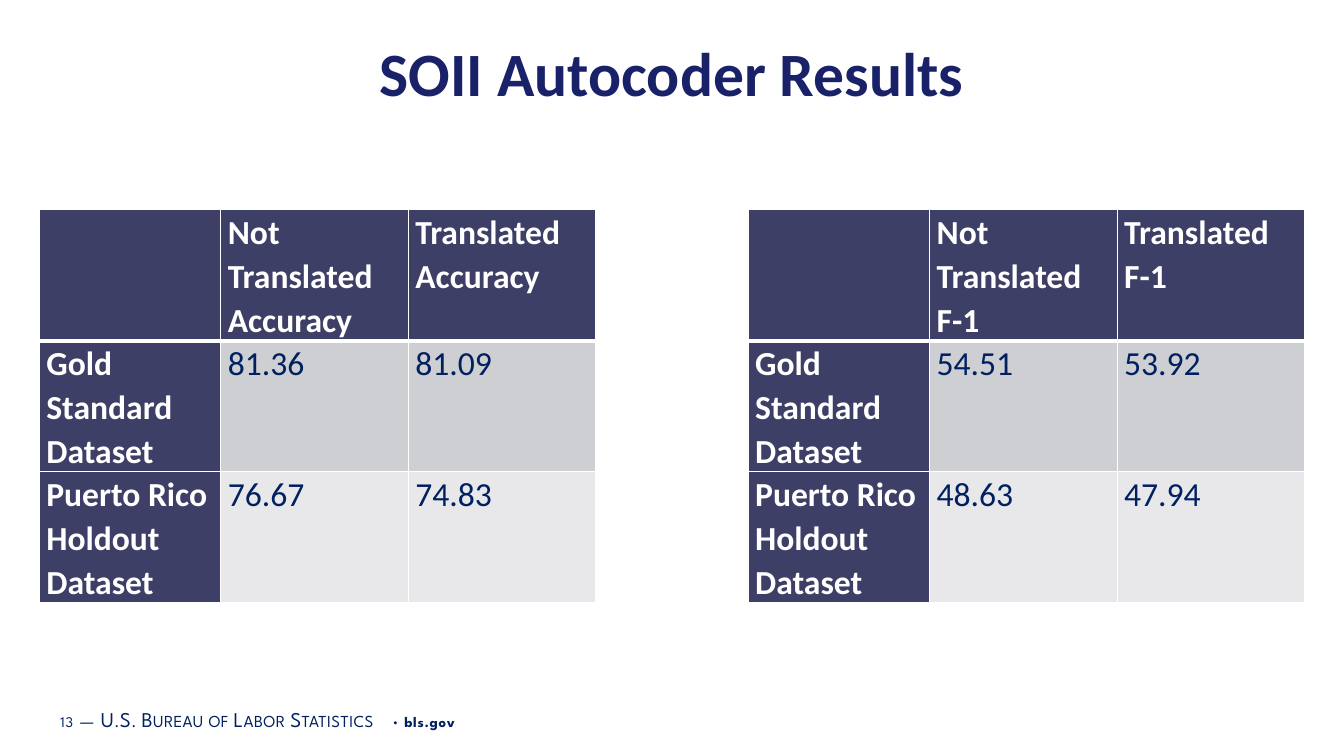
from dataclasses import dataclass

from lxml.etree import SubElement
from pptx import Presentation
from pptx.dml.color import RGBColor
from pptx.enum.text import MSO_ANCHOR as Anchor, PP_ALIGN as Align
from pptx.oxml.ns import qn
from pptx.util import Inches, Pt

TITLE = "SOII Autocoder Results"
ACCURACY = [
    ("", "Not Translated Accuracy", "Translated Accuracy"),
    ("Gold Standard Dataset", "81.36", "81.09"),
    ("Puerto Rico Holdout Dataset", "76.67", "74.83"),
]
F1 = [
    ("", "Not Translated F-1", "Translated F-1"),
    ("Gold Standard Dataset", "54.51", "53.92"),
    ("Puerto Rico Holdout Dataset", "48.63", "47.94"),
]


@dataclass(frozen=True)
class Theme:
    body_font: str = "Calibri"
    footer_font: str = "League Spartan"
    title: str = "192168"
    navy: str = "002060"
    header: str = "3E3F67"
    white: str = "FFFFFF"
    bands: tuple = ("CECFD3", "E8E8EB")
    title_size: float = 44
    table_size: float = 24
    footer_size: float = 10.5
    caps_size: float = 15
    gap_size: float = 16


THEME = Theme()
SMALL = dict(size=THEME.footer_size, spacing=50)
CAPS = dict(size=THEME.caps_size, spacing=30, small_caps=True)
GAP = dict(size=THEME.gap_size, spacing=50)
FOOTER = [
    ("13", SMALL),
    (" ", GAP),
    ("—", CAPS),
    (" ", GAP),
    ("U.S. Bureau of Labor Statistics", CAPS),
    (" • ", SMALL),
    ("bls.gov", dict(SMALL, bold=True)),
]

WIDTH, HEIGHT = 13.33, 7.5
TABLE_TOP, TABLE_LEFTS = 2.08, (0.39, 7.42)
COLUMNS, ROW_HEIGHT = (1.8, 1.86, 1.86), 1.3
SIDE_INSET = 0.07


def add_text(paragraph, text, size, color, font=THEME.body_font, bold=False,
             spacing=None, small_caps=False):
    run = paragraph.add_run()
    run.text = text
    run.font.size, run.font.name, run.font.bold = Pt(size), font, bold
    run.font.color.rgb = RGBColor.from_string(color)
    properties = run.font._element
    if spacing:
        properties.set("spc", str(spacing))
    if small_caps:
        properties.set("cap", "small")


def add_borders(cell, **widths):
    """Draw white cell edges; widths are points for L, R, T and B."""
    properties = cell._tc.get_or_add_tcPr()
    for side in "LRTB":
        edge = SubElement(properties, qn(f"a:ln{side}"), w=str(Pt(widths.get(side, 1))))
        SubElement(SubElement(edge, qn("a:solidFill")), qn("a:srgbClr"), val=THEME.white)


def add_results(slide, left, results):
    table = slide.shapes.add_table(
        len(results), len(COLUMNS), Inches(left), Inches(TABLE_TOP),
        Inches(sum(COLUMNS)), Inches(ROW_HEIGHT * len(results))).table
    for column, width in zip(table.columns, COLUMNS):
        column.width = Inches(width)
    for r, values in enumerate(results):
        table.rows[r].height = Inches(ROW_HEIGHT)
        for c, value in enumerate(values):
            cell = table.cell(r, c)
            heading = r == 0 or c == 0
            add_borders(cell, T=3 if r == 1 else 1, B=3 if r == 0 else 1)
            cell.fill.solid()
            cell.fill.fore_color.rgb = RGBColor.from_string(
                THEME.header if heading else THEME.bands[(r - 1) % 2])
            cell.margin_left = cell.margin_right = Inches(SIDE_INSET)
            cell.margin_top = cell.margin_bottom = 0
            if value:
                paragraph = cell.text_frame.paragraphs[0]
                paragraph.line_spacing = 1.07
                add_text(paragraph, value, THEME.table_size,
                         THEME.white if heading else THEME.navy, bold=heading)


def add_title(slide):
    title = slide.shapes.title
    title.left, title.top = Inches(0.54), Inches(0.3)
    title.width, title.height = Inches(12.25), Inches(1.2)
    title.text_frame.vertical_anchor = Anchor.TOP
    paragraph = title.text_frame.paragraphs[0]
    paragraph.alignment = Align.CENTER
    add_text(paragraph, TITLE, THEME.title_size, THEME.title, bold=True)


def add_footer(slide):
    frame = slide.shapes.add_textbox(
        Inches(0.53), Inches(6.93), Inches(8.47), Inches(0.4)).text_frame
    frame.word_wrap = True
    frame.vertical_anchor = Anchor.MIDDLE
    frame.margin_left = frame.margin_right = Inches(SIDE_INSET)
    frame.margin_top = frame.margin_bottom = Inches(0.04)
    for text, style in FOOTER:
        add_text(frame.paragraphs[0], text, color=THEME.navy,
                 font=THEME.footer_font, **style)


def main():
    deck = Presentation()
    deck.slide_width, deck.slide_height = Inches(WIDTH), Inches(HEIGHT)
    slide = deck.slides.add_slide(deck.slide_layouts.get_by_name("Title Only"))
    add_footer(slide)
    add_title(slide)
    for left, results in zip(TABLE_LEFTS, (ACCURACY, F1)):
        add_results(slide, left, results)
    deck.save("out.pptx")


if __name__ == "__main__":
    main()
